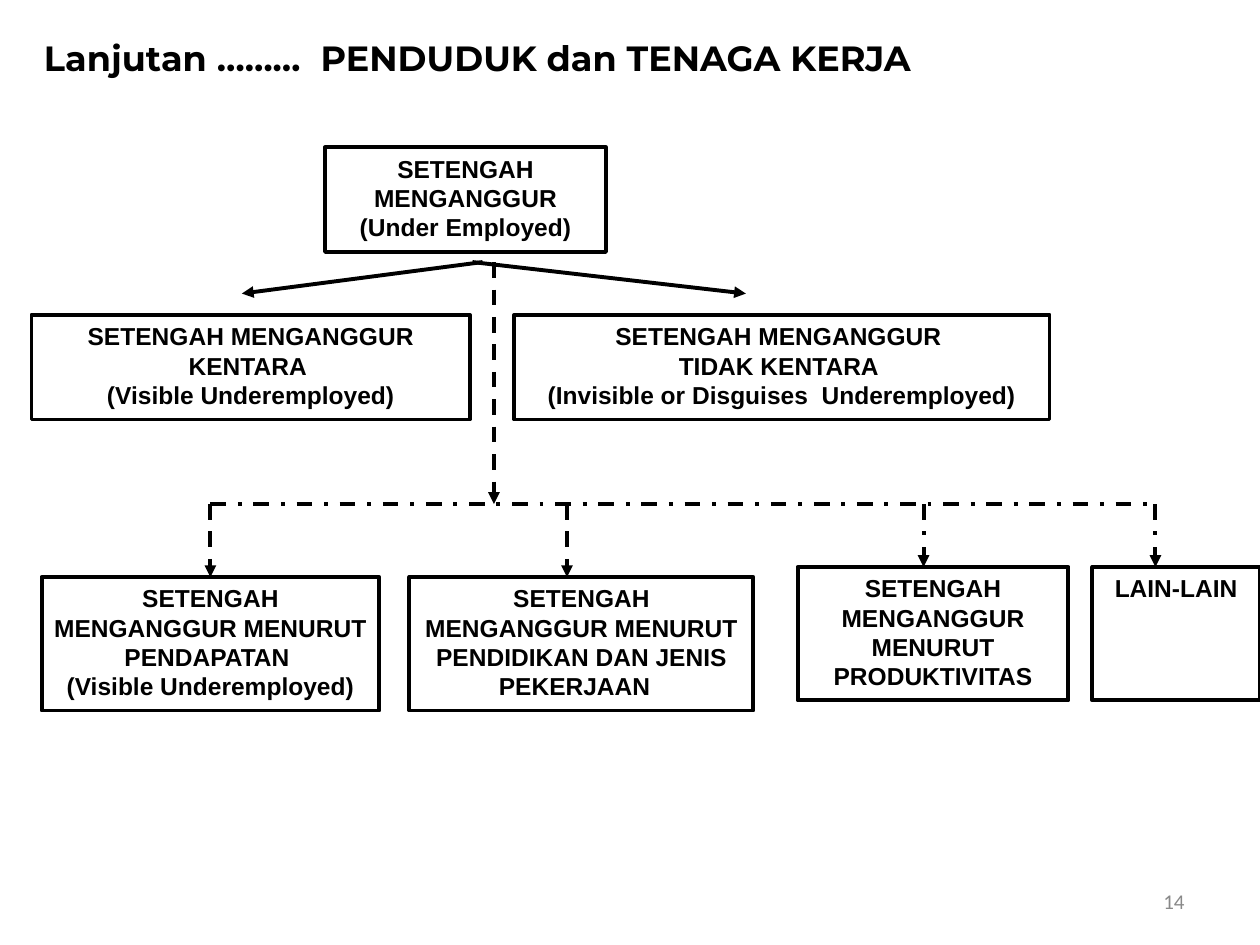
from lxml import etree
from pptx import Presentation
from pptx.dml.color import RGBColor
from pptx.enum import dml, shapes, text
from pptx.oxml.ns import qn
from pptx.util import Inches, Pt

COLORS = {"ink": "000000", "number": "898989"}
DASH = dml.MSO_LINE.DASH
DASH_DOT = dml.MSO_LINE.DASH_DOT


def write_text(frame, lines, font="Arial", size=14, color="ink", bold=True,
               align=text.PP_ALIGN.CENTER, anchor=text.MSO_ANCHOR.TOP, wrap=True):
    """Fill a text frame with one paragraph per line."""
    frame.word_wrap = wrap
    frame.vertical_anchor = anchor
    for index, line in enumerate(lines):
        paragraph = frame.paragraphs[0] if index == 0 else frame.add_paragraph()
        paragraph.alignment = align
        run = paragraph.add_run()
        run.text = line
        run.font.name = font
        run.font.size = Pt(size)
        run.font.bold = bold
        run.font.color.rgb = RGBColor.from_string(COLORS[color])


class Diagram:
    """Hold the line style and the slide being drawn."""

    def __init__(self, slide, line_width=2.25):
        self.slide = slide
        self.line_width = Pt(line_width)

    def style_line(self, line):
        line.color.rgb = RGBColor.from_string(COLORS["ink"])
        line.width = self.line_width

    def label(self, left, top, width, height, line, **style):
        shape = self.slide.shapes.add_textbox(*map(Inches, (left, top, width, height)))
        write_text(shape.text_frame, [line], **style)

    def box(self, left, top, width, height, *lines):
        shape = self.slide.shapes.add_shape(
            shapes.MSO_SHAPE.RECTANGLE, *map(Inches, (left, top, width, height)))
        shape.shadow.inherit = False
        shape.fill.background()
        self.style_line(shape.line)
        write_text(shape.text_frame, lines)
        return shape

    def connect(self, start, end, dash=None, arrow=True, target=None):
        connector = self.slide.shapes.add_connector(
            shapes.MSO_CONNECTOR.STRAIGHT, *map(Inches, start + end))
        self.style_line(connector.line)
        if dash is not None:
            connector.line.dash_style = dash
        if arrow:
            etree.SubElement(connector.line._get_or_add_ln(), qn("a:tailEnd"), type="triangle")
        etree.SubElement(connector._element.spPr, qn("a:effectLst"))
        if target is not None:
            connector.end_connect(target, 0)


def main():
    presentation = Presentation()
    presentation.slide_width = Inches(10)
    presentation.slide_height = Inches(7.5)
    diagram = Diagram(presentation.slides.add_slide(presentation.slide_layouts[6]))

    diagram.label(0.25, 0.24, 7.59, 0.43, "Lanjutan ………  PENDUDUK dan TENAGA KERJA",
                  font="Montserrat", size=20, align=text.PP_ALIGN.LEFT, wrap=False)

    box_height = 0.83
    diagram.box(2.58, 1.17, 2.23, box_height, "SETENGAH MENGANGGUR", "(Under Employed)")
    diagram.box(0.25, 2.5, 3.48, box_height,
                "SETENGAH MENGANGGUR KENTARA ", "(Visible Underemployed)")
    diagram.box(4.08, 2.5, 4.25, box_height, "SETENGAH MENGANGGUR ", "TIDAK KENTARA ",
                "(Invisible or Disguises  Underemployed)")

    fork_y, bus_y = 2.08, 4
    diagram.connect((3.83, fork_y), (1.92, 2.33))
    diagram.connect((3.75, fork_y), (5.92, 2.33))
    diagram.connect((3.92, fork_y), (3.92, bus_y), DASH)
    diagram.connect((1.67, bus_y), (9.17, bus_y), DASH_DOT, arrow=False)

    branches = [
        (0.33, 4.58, 2.68, 1.67, DASH,
         ["SETENGAH MENGANGGUR MENURUT PENDAPATAN ", "(Visible Underemployed)"]),
        (3.25, 4.58, 2.73, 4.5, DASH,
         ["SETENGAH MENGANGGUR MENURUT PENDIDIKAN DAN JENIS PEKERJAAN  "]),
        (6.33, 4.5, 2.15, 7.33, DASH_DOT, ["SETENGAH MENGANGGUR MENURUT PRODUKTIVITAS"]),
        (8.67, 4.5, 1.33, 9.17, DASH_DOT, ["LAIN-LAIN"]),
    ]
    for left, top, width, arrow_x, dash, lines in branches:
        branch = diagram.box(left, top, width, 1.06, *lines)
        centered = abs(left + width / 2 - arrow_x) < 0.01
        diagram.connect((arrow_x, bus_y), (arrow_x, top), dash,
                        target=branch if centered else None)

    diagram.label(7.17, 6.95, 2.33, 0.4, "14", font="Calibri", size=12, color="number",
                  bold=False, align=text.PP_ALIGN.RIGHT, anchor=text.MSO_ANCHOR.MIDDLE)
    presentation.save("out.pptx")


if __name__ == "__main__":
    main()
